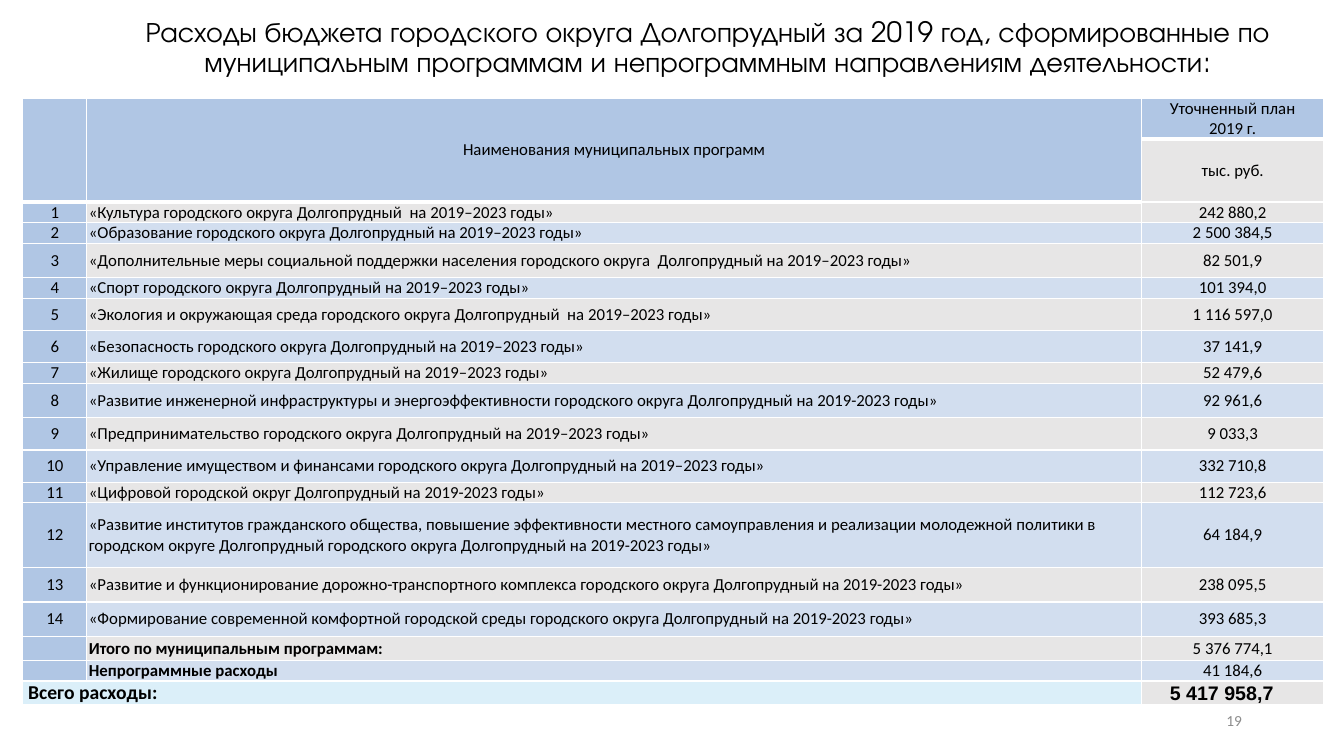
from dataclasses import dataclass

from lxml.etree import SubElement as Sub
from pptx import Presentation
from pptx.dml.color import RGBColor as Rgb
from pptx.enum.text import MSO_ANCHOR as Anchor, PP_ALIGN as Align
from pptx.oxml.ns import qn
from pptx.util import Cm, Pt


@dataclass(frozen=True)
class Theme:
    head: str = "B0C6E4"
    grey: str = "E7E6E6"
    blue: str = "D2DEEF"
    total: str = "DBEFF9"
    rule: str = "FFFFFF"
    ink: str = "000000"
    dim: str = "8C8C8C"
    body: str = "Calibri"
    title: str = "TeX Gyre Adventor"
    sum: str = "Arial"
    big: int = 20
    mid: int = 14
    base: int = 12
    tiny: int = 11


class Page:
    def __init__(self, deck, theme):
        self.theme = theme
        self.slide = deck.slides.add_slide(deck.slide_layouts[6])

    def text(self, para, words, size, font=None, color=None, bold=False):
        """Add text run by run, with a line break at each newline."""
        for n, line in enumerate(words.split("\n")):
            if n:
                para.add_line_break()
            run = para.add_run()
            run.text = line
            run.font.size = Pt(size)
            run.font.name = font or self.theme.body
            run.font.bold = bold
            run.font.color.rgb = Rgb.from_string(color or self.theme.ink)

    def label(self, box, words, align, size, space=None, **style):
        frame = self.slide.shapes.add_textbox(*map(Cm, box)).text_frame
        frame.word_wrap = True
        frame.vertical_anchor = Anchor.MIDDLE
        para = frame.paragraphs[0]
        para.alignment = align
        para.line_spacing = space
        self.text(para, words, size, **style)

    def table(self, left, top, cols, rows):
        shape = self.slide.shapes.add_table(
            len(rows), len(cols), Cm(left), Cm(top), Cm(sum(cols)), Cm(sum(rows)))
        grid = shape.table
        grid.first_row = grid.horz_banding = False
        for col, wide in zip(grid.columns, cols):
            col.width = Cm(wide)
        for row, high in zip(grid.rows, rows):
            row.height = Cm(high)
        return grid

    def cell(self, cell, words, fill, align=Align.CENTER, size=None,
             left=0.05, anchor=Anchor.MIDDLE, under=1, **style):
        size = size or self.theme.base
        cell.margin_left, cell.margin_right = Cm(left), Cm(0.05)
        cell.margin_top = cell.margin_bottom = 0
        cell.vertical_anchor = anchor
        self.rules(cell, under)
        cell.fill.solid()
        cell.fill.fore_color.rgb = Rgb.from_string(fill)
        para = cell.text_frame.paragraphs[0]
        para.alignment = align
        if words:
            self.text(para, words, size, **style)
        else:
            # Keeps an empty cell from stretching its row
            Sub(para._p, qn("a:endParaRPr"), sz=str(size * 100))

    def rules(self, cell, under):
        props = cell._tc.get_or_add_tcPr()
        for side, width in zip("LRTB", (1, 1, 1, under)):
            line = Sub(props, qn(f"a:ln{side}"), w=str(Pt(width)))
            Sub(Sub(line, qn("a:solidFill")), qn("a:srgbClr"), val=self.theme.rule)


# Programme name, sum, row height in cm
LOW, MID, HIGH = 0.52, 0.81, 0.87
PLANS = [
    ("«Культура городского округа Долгопрудный  на 2019–2023 годы»", "242 880,2", LOW),
    ("«Образование городского округа Долгопрудный на 2019–2023 годы»", "2 500 384,5", LOW),
    ("«Дополнительные меры социальной поддержки населения городского округа  "
     "Долгопрудный на 2019–2023 годы»", "82 501,9", HIGH),
    ("«Спорт городского округа Долгопрудный на 2019–2023 годы»", "101 394,0", LOW),
    ("«Экология и окружающая среда городского округа Долгопрудный  "
     "на 2019–2023 годы»", "1 116 597,0", MID),
    ("«Безопасность городского округа Долгопрудный на 2019–2023 годы»", "37 141,9", MID),
    ("«Жилище городского округа Долгопрудный на 2019–2023 годы»", "52 479,6", LOW),
    ("«Развитие инженерной инфраструктуры и энергоэффективности городского округа "
     "Долгопрудный на 2019-2023 годы»", "92 961,6", HIGH),
    ("«Предпринимательство городского округа Долгопрудный на 2019–2023 годы»",
     "9 033,3", MID),
    ("«Управление имуществом и финансами городского округа Долгопрудный "
     "на 2019–2023 годы»", "332 710,8", MID),
    ("«Цифровой городской округ Долгопрудный на 2019-2023 годы»", "112 723,6", LOW),
    ("«Развитие институтов гражданского общества, повышение эффективности местного "
     "самоуправления и реализации молодежной политики в городском округе Долгопрудный "
     "городского округа Долгопрудный на 2019-2023 годы»", "64 184,9", 1.63),
    ("«Развитие и функционирование дорожно-транспортного комплекса городского округа "
     "Долгопрудный на 2019-2023 годы»", "238 095,5", HIGH),
    ("«Формирование современной комфортной городской среды городского округа "
     "Долгопрудный на 2019-2023 годы»", "393 685,3", HIGH),
]
SUMS = [
    ("Итого по муниципальным программам:", "5 376 774,1", 0.6),
    ("Непрограммные расходы", "41 184,6", LOW),
]


def main():
    deck = Presentation()
    deck.slide_width, deck.slide_height = Cm(33.87), Cm(19.05)
    theme = Theme()
    page = Page(deck, theme)

    # Page number
    page.label((23.93, 17.65, 7.62, 1.02), "19", Align.RIGHT, theme.tiny, color=theme.dim)

    # Table frame
    body = PLANS + SUMS
    rows = [1.03, 1.58, *(high for _, _, high in body), 0.6]
    grid = page.table(0.57, 2.48, (1.62, 26.58, 4.59), rows)

    # Header
    heads = ("", "Наименования муниципальных программ", "Уточненный план\n2019 г.")
    units = ("", "", "тыс. руб.")
    for col, (head, unit) in enumerate(zip(heads, units)):
        page.cell(grid.cell(0, col), head, theme.head, under=3)
        page.cell(grid.cell(1, col), unit, theme.grey if unit else theme.head)
    for col in (0, 1):
        grid.cell(0, col).merge(grid.cell(1, col))

    # Programmes and subtotals, in alternating bands
    for n, (name, cost, _) in enumerate(body):
        plan = n < len(PLANS)
        band = theme.blue if n % 2 else theme.grey
        num, title, value = (grid.cell(n + 2, col) for col in range(3))
        page.cell(num, str(n + 1) if plan else "", theme.head)
        page.cell(title, name, band, Align.LEFT, bold=not plan)
        page.cell(value, cost, band)

    # Grand total
    last = len(rows) - 1
    page.cell(grid.cell(last, 0), "Всего расходы:", theme.total, Align.LEFT,
              theme.mid, left=0.14, bold=True)
    page.cell(grid.cell(last, 1), "", theme.total)
    page.cell(grid.cell(last, 2), "5 417 958,7", theme.grey, Align.LEFT, theme.mid,
              left=0.71, anchor=Anchor.BOTTOM, font=theme.sum, bold=True)
    grid.cell(last, 0).merge(grid.cell(last, 1))

    # Title
    page.label((2.31, 0.25, 31.04, 1.96),
               "Расходы бюджета городского округа Долгопрудный за 2019 год, сформированные "
               "по муниципальным программам и непрограммным направлениям деятельности:",
               Align.CENTER, theme.big, space=0.9, font=theme.title)

    deck.save("out.pptx")


if __name__ == "__main__":
    main()
